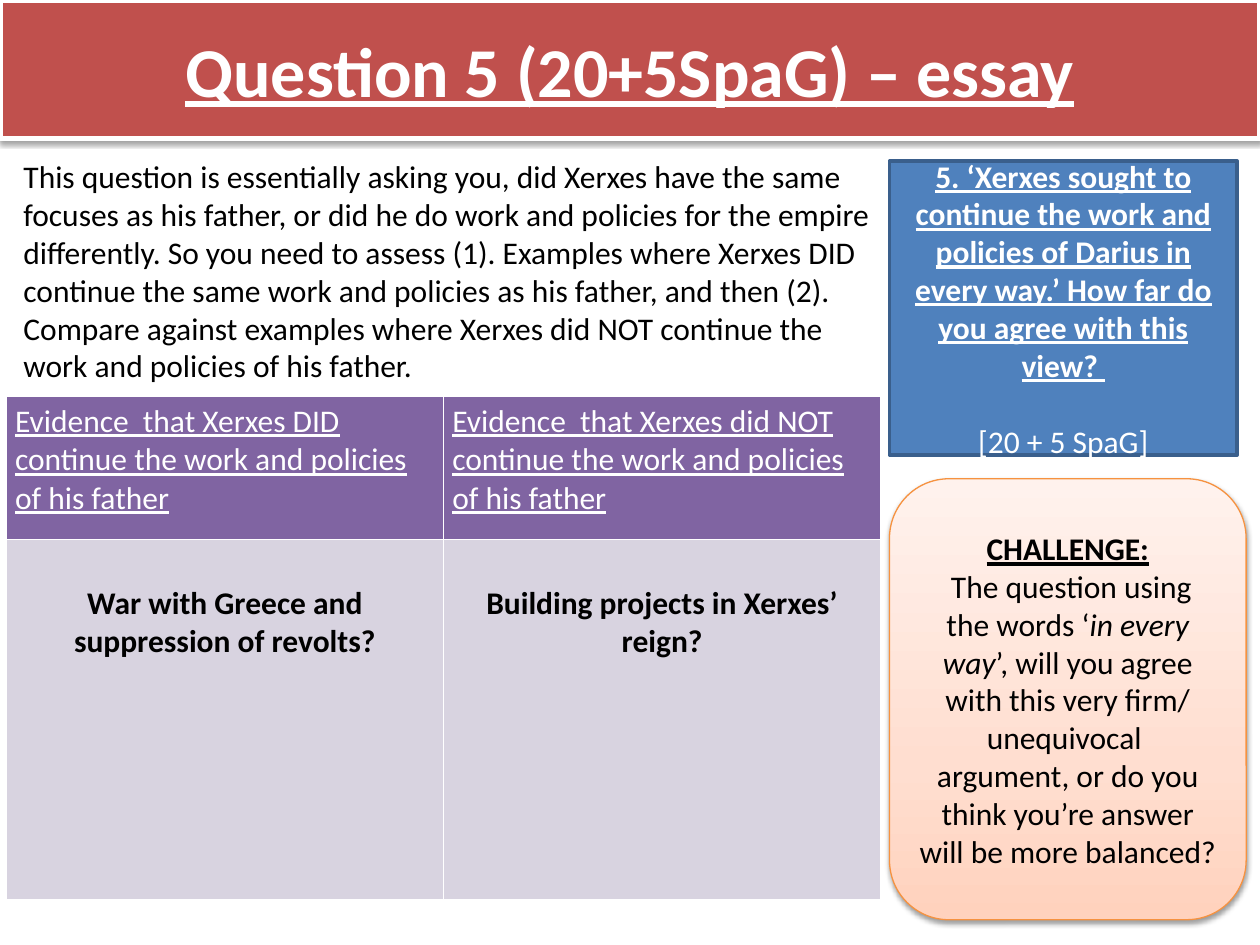
from copy import deepcopy

from lxml import etree
from pptx import Presentation
from pptx import util as u
from pptx.dml.color import RGBColor
from pptx.enum import shapes, text
from pptx.oxml import ns

WHITE = RGBColor(0xFF, 0xFF, 0xFF)
BLACK = RGBColor(0x00, 0x00, 0x00)
RED = RGBColor(0xC0, 0x50, 0x4D)
BLUE = RGBColor(0x4F, 0x81, 0xBD)
DARK_BLUE = RGBColor(0x3A, 0x5F, 0x8C)
PURPLE = RGBColor(0x80, 0x64, 0xA2)
LILAC = RGBColor(0xD8, 0xD3, 0xE0)
ORANGE = RGBColor(0xF6, 0x92, 0x40)
PEACH_STOPS = [
    (0, RGBColor(0xFF, 0xD2, 0xBD)),
    (0.35, RGBColor(0xFF, 0xDE, 0xD0)),
    (1, RGBColor(0xFF, 0xF2, 0xED)),
]

CENTER = text.PP_ALIGN.CENTER
LEFT = text.PP_ALIGN.LEFT
HEADING = {"bold": True, "underline": True}
LINE_GAP = 22  # one line of 18 pt text


def add_xml(parent, tag, **attributes):
    return etree.SubElement(parent, ns.qn(tag), attributes)


class Deck:
    """Holds the text style and the slide being filled."""

    def __init__(self, width, height):
        self.presentation = Presentation()
        self.presentation.slide_width = u.Pt(width)
        self.presentation.slide_height = u.Pt(height)
        self.slide = self.presentation.slides.add_slide(
            self.presentation.slide_layouts[6])
        self.style = {"name": "Calibri", "size": u.Pt(18)}

    def fill_text(self, frame, paragraphs, color, align=CENTER, gap=0, **base):
        """Fill a frame; each paragraph is a list of (words, format) runs."""
        frame.word_wrap = True
        for index, runs in enumerate(paragraphs):
            paragraph = frame.paragraphs[0] if index == 0 else frame.add_paragraph()
            paragraph.alignment = align
            if index:
                paragraph.space_before = u.Pt(gap)
            for words, formats in runs:
                run = paragraph.add_run()
                run.text = words
                run.font.color.rgb = color
                for key, value in {**self.style, **base, **formats}.items():
                    setattr(run.font, key, value)

    def text(self, box, paragraphs, color):
        frame = self.slide.shapes.add_textbox(*map(u.Pt, box)).text_frame
        self.fill_text(frame, paragraphs, color, LEFT)

    def panel(self, kind, box, fill, line, line_width, shadow=False):
        """Add a shape; a list as fill means gradient stops, bottom to top."""
        shape = self.slide.shapes.add_shape(kind, *map(u.Pt, box))
        if isinstance(fill, list):
            self.gradient(shape.fill, fill)
        else:
            shape.fill.solid()
            shape.fill.fore_color.rgb = fill
        shape.line.color.rgb = line
        shape.line.width = u.Pt(line_width)
        shape.shadow.inherit = False
        if shadow:
            self.drop_shadow(shape)
        shape.text_frame.vertical_anchor = text.MSO_ANCHOR.MIDDLE
        return shape.text_frame

    def gradient(self, fill, stops):
        fill.gradient()
        fill.gradient_angle = 90
        stop_list = fill._fill._gradFill.find(ns.qn("a:gsLst"))
        while len(stop_list) < len(stops):
            stop_list.append(deepcopy(stop_list[0]))
        for stop, (position, color) in zip(fill.gradient_stops, stops):
            stop.position = position
            stop.color.rgb = color

    def drop_shadow(self, shape):
        effects = shape._element.spPr.find(ns.qn("a:effectLst"))
        shadow = add_xml(effects, "a:outerShdw", blurRad=str(u.Pt(3.1)),
                         dist=str(u.Pt(1.6)), dir="5400000", rotWithShape="0")
        color = add_xml(shadow, "a:srgbClr", val=str(BLACK))
        add_xml(color, "a:alpha", val="38000")

    def table(self, box, row_heights, rows):
        """Each row is (cell texts, fill, top margin, text format)."""
        columns = len(rows[0][0])
        table = self.slide.shapes.add_table(
            len(rows), columns, *map(u.Pt, box)).table
        for row, height in zip(table.rows, row_heights):
            row.height = u.Pt(height)
        for r, (cells, fill, top, formats) in enumerate(rows):
            for c, words in enumerate(cells):
                cell = table.cell(r, c)
                cell.margin_left = cell.margin_right = u.Pt(5)
                cell.margin_top, cell.margin_bottom = u.Pt(top), u.Pt(3.6)
                cell.fill.solid()
                cell.fill.fore_color.rgb = fill
                self.borders(cell)
                self.fill_text(cell.text_frame, [[(words, {})]], **formats)

    def borders(self, cell):
        properties = cell._tc.get_or_add_tcPr()
        for index, side in enumerate("LRTB"):
            line = add_xml(properties, f"a:ln{side}", w=str(u.Pt(1)))
            color = add_xml(line, "a:solidFill")
            add_xml(color, "a:srgbClr", val=str(WHITE))
            properties.insert(index, line)


def main():
    deck = Deck(720, 540)
    rect = shapes.MSO_SHAPE.RECTANGLE
    rounded = shapes.MSO_SHAPE.ROUNDED_RECTANGLE

    title = deck.panel(rect, (0, 0, 720, 79), RED, WHITE, 3, shadow=True)
    deck.fill_text(title, [[("Question 5 (20+5SpaG) – essay", HEADING)]], WHITE,
                   size=u.Pt(40))

    deck.text((6.3, 86.4, 500, 140), [[(
        "This question is essentially asking you, did Xerxes have the same "
        "focuses as his father, or did he do work and policies for the empire "
        "differently. So you need to assess (1). Examples where Xerxes DID "
        "continue the same work and policies as his father, and then (2). "
        "Compare against examples where Xerxes did NOT continue the work and "
        "policies of his father.", {})]], BLACK)

    question = deck.panel(rect, (508.3, 92, 198.7, 168), BLUE, DARK_BLUE, 2)
    deck.fill_text(question, [
        [("5. ‘Xerxes sought to continue the work and policies of Darius in "
          "every way.’ How far do you agree with this view? ", HEADING)],
        [("[20 + 5 SpaG]", {})],
    ], WHITE, gap=LINE_GAP)

    evidence = [f"Evidence  that Xerxes {verb} continue the work and policies "
                "of his father" for verb in ("DID", "did NOT")]
    prompts = ["War with Greece and suppression of revolts?",
               "Building projects in Xerxes’ reign?"]
    deck.table((3.6, 226.4, 499.7, 288), (82, 206), [
        (evidence, PURPLE, 3.6,
         {"color": WHITE, "align": LEFT, "bold": False, "underline": True}),
        (prompts, LILAC, 3.6 + LINE_GAP, {"color": BLACK, "bold": True}),
    ])

    challenge = deck.panel(rounded, (508.3, 273.6, 203.8, 252), PEACH_STOPS,
                           ORANGE, 0.75, shadow=True)
    deck.fill_text(challenge, [
        [("CHALLENGE:", HEADING)],
        [(" The question using the words ‘", {}),
         ("in every way", {"italic": True}),
         ("’, will you agree with this very firm/ unequivocal  argument, or do "
          "you think you’re answer will be more balanced?", {})],
    ], BLACK)

    deck.presentation.save("out.pptx")


if __name__ == "__main__":
    main()
